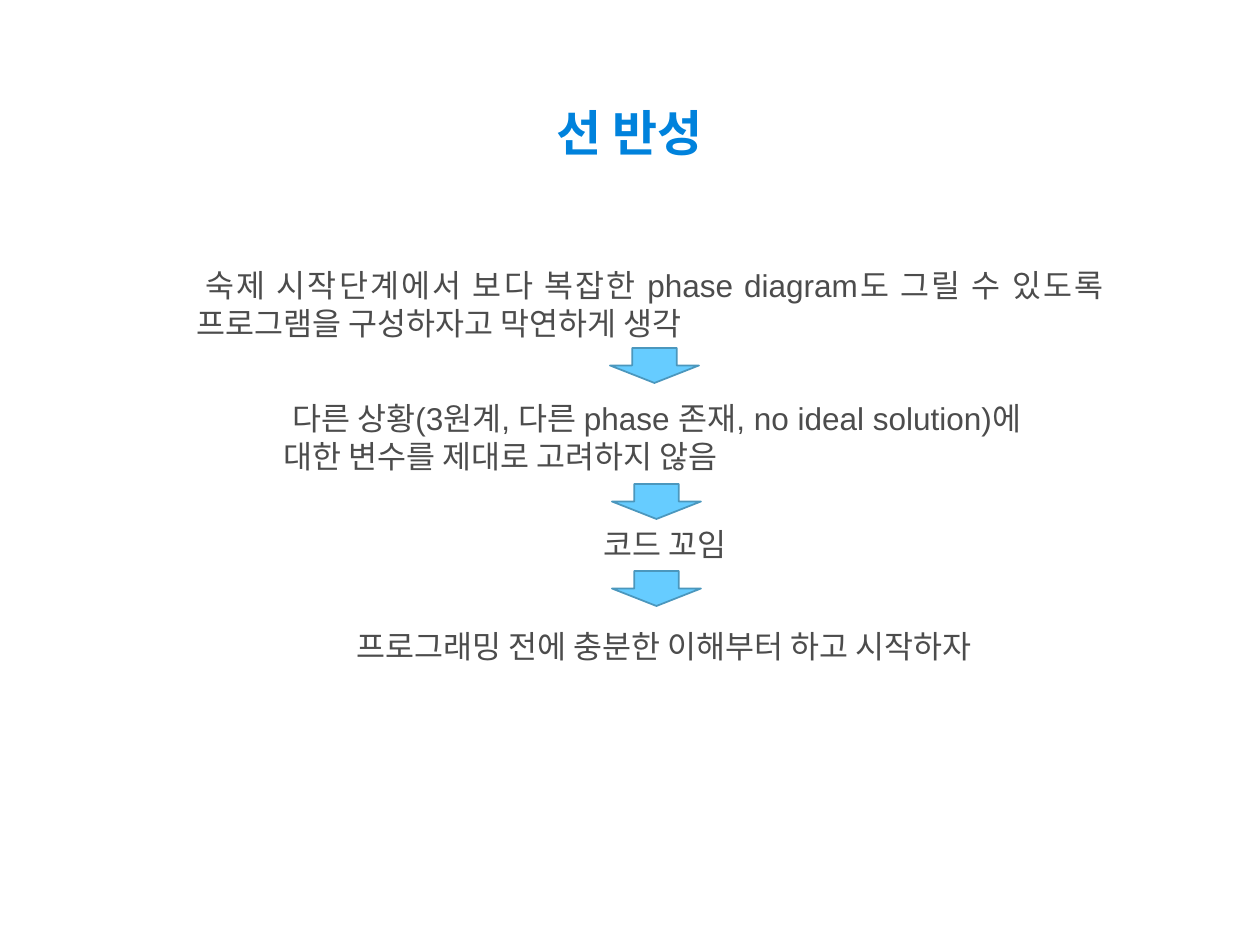
from pptx import Presentation
from pptx.dml.color import RGBColor
from pptx.enum.shapes import MSO_SHAPE
from pptx.enum.text import MSO_ANCHOR, MSO_AUTO_SIZE, PP_ALIGN
from pptx.util import Inches, Pt

PX_PER_INCH = 126
TITLE_FONT = {"name": "Arial", "size": Pt(28), "bold": True}
STEP_FONT = {"name": "Arial", "size": Pt(18), "bold": False}
FIRST_LINE_INDENT = 9

# Text, alignment and box (left, top, width, height) of each step
STEPS = [
    ("숙제 시작단계에서 보다 복잡한 phase diagram도 그릴 수 있도록 "
     "프로그램을 구성하자고 막연하게 생각", PP_ALIGN.JUSTIFY, (184, 260, 932, 89)),
    ("다른 상황(3원계, 다른 phase 존재, no ideal solution)에 대한 "
     "변수를 제대로 고려하지 않음", PP_ALIGN.LEFT, (271, 393, 774, 89)),
    ("코드 꼬임", PP_ALIGN.CENTER, (219, 519, 883, 50)),
    ("프로그래밍 전에 충분한 이해부터 하고 시작하자", PP_ALIGN.CENTER,
     (218, 621, 883, 50)),
]
ARROWS = [(610, 348, 89, 35), (612, 484, 89, 35), (612, 571, 89, 35)]


def px(length):
    return Inches(length / PX_PER_INCH)


def color(hex_string):
    return RGBColor.from_string(hex_string)


def write(para, text, align, font, hex_string):
    para.text = text
    para.alignment = align
    for key, value in font.items():
        setattr(para.font, key, value)
    para.font.color.rgb = color(hex_string)


def add_title(page, box, text):
    title = page.shapes.title
    title.left, title.top, title.width, title.height = map(px, box)
    frame = title.text_frame
    frame.vertical_anchor = MSO_ANCHOR.TOP
    write(frame.paragraphs[0], text, PP_ALIGN.CENTER, TITLE_FONT, "0082DC")


def add_step(page, box, text, align):
    frame = page.shapes.add_textbox(*map(px, box)).text_frame
    frame.word_wrap = True
    frame.auto_size = MSO_AUTO_SIZE.SHAPE_TO_FIT_TEXT
    para = frame.paragraphs[0]
    write(para, text, align, STEP_FONT, "4C4C4C")
    para._p.get_or_add_pPr().set("indent", str(px(FIRST_LINE_INDENT)))


def add_arrow(page, box):
    arrow = page.shapes.add_shape(MSO_SHAPE.DOWN_ARROW, *map(px, box))
    arrow.shadow.inherit = False
    arrow.fill.solid()
    arrow.fill.fore_color.rgb = color("66CCFF")
    arrow.line.color.rgb = color("4B97BD")
    arrow.line.width = Pt(1)


def main():
    deck = Presentation()
    deck.slide_width, deck.slide_height = Inches(10), Inches(7.5)
    page = deck.slides.add_slide(deck.slide_layouts[5])
    add_title(page, (84, 96, 1091, 80), "선 반성")
    for text, align, box in STEPS:
        add_step(page, box, text, align)
    for box in ARROWS:
        add_arrow(page, box)
    deck.save("out.pptx")


if __name__ == "__main__":
    main()
